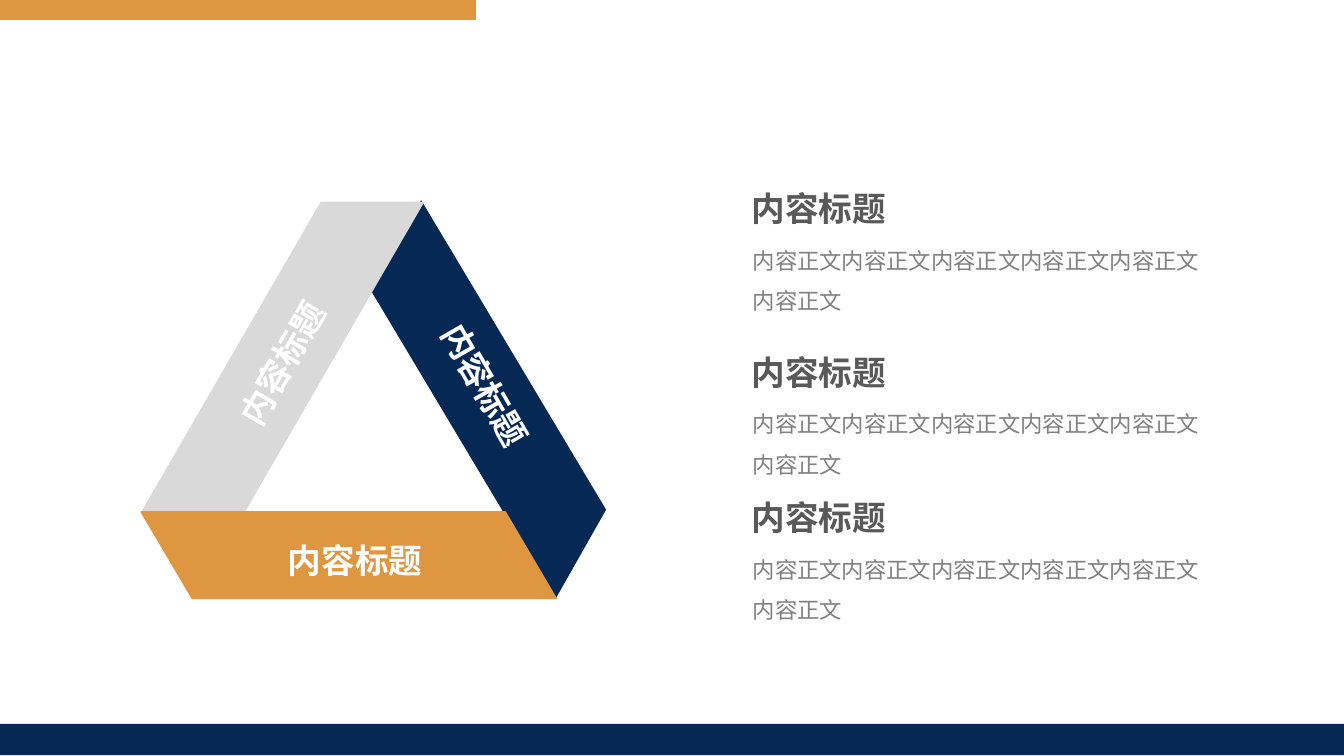
from lxml import etree
from pptx import Presentation
from pptx.dml.color import RGBColor
from pptx.enum import shapes, text
from pptx.oxml.ns import qn
from pptx.util import Cm, Pt

FONT = "Noto Sans CJK SC"
NAVY, GREY, ORANGE = "062855", "D9D9D9", "DE9640"
WHITE, HEADING, BODY = "FFFFFF", "595959", "808080"

# Content: lengths in cm
SIDES = [
    dict(title="内容标题", fill=NAVY, box=(8.76, 6.12, 7.09, 7.9), turn=299.5,
         slant=0.634, label=(10.49, 9.19, 3.48, 1.02), label_turn=60),
    dict(title="内容标题", fill=GREY, box=(3.56, 5.08, 7.14, 7.82), turn=0,
         slant=0.634, label=(4.75, 8.64, 4.72, 1.02), label_turn=300),
    dict(title="内容标题", fill=ORANGE, box=(3.56, 12.9, 10.46, 2.18), turn=0,
         slant=0.589, label=(7.21, 13.61, 3.48, 1.02), label_turn=0,
         mirrored=True, outlined=True),
]
DETAIL = ["内容正文内容正文内容正文内容正文内容正文", "内容正文"]
SECTIONS = [
    (4.62, "内容标题", DETAIL),
    (8.74, "内容标题", DETAIL),
    (12.4, "内容标题", DETAIL),
]
BARS = [
    (ORANGE, (0, 0, 4.72 * 2.54, 0.5), True),
    (NAVY, (0, 18.24, 33.87, 0.79), False),
]

deck = Presentation()
deck.slide_width, deck.slide_height = Cm(33.87), Cm(19.05)
slide = deck.slides.add_slide(deck.slide_layouts[6])


def colour(value):
    return RGBColor.from_string(value)


def add_block(kind, box, fill, outlined=False):
    block = slide.shapes.add_shape(kind, *map(Cm, box))
    block.shadow.inherit = False
    block.fill.solid()
    block.fill.fore_color.rgb = colour(fill)
    if outlined:
        block.line.color.rgb = colour(fill)
        block.line.width = Pt(1)
    else:
        block.line.fill.background()
    return block


def add_text(box, lines, size, ink, bold=False, spacing=None):
    holder = slide.shapes.add_textbox(*map(Cm, box))
    frame = holder.text_frame
    frame.word_wrap = True
    frame.text = "\n".join(lines)
    for paragraph in frame.paragraphs:
        paragraph.line_spacing = spacing
        for run in paragraph.runs:
            run.font.size, run.font.bold = Pt(size), bold
            run.font.name = FONT
            run.font.color.rgb = colour(ink)
            # East Asian typeface follows the Latin one
            latin = run.font._element.find(qn("a:latin"))
            east_asian = etree.Element(qn("a:ea"), typeface=FONT)
            latin.addnext(east_asian)
    return holder


# Triangle of folded bands with their labels
for side in SIDES:
    band = add_block(shapes.MSO_SHAPE.PARALLELOGRAM, side["box"], side["fill"],
                     side.get("outlined", False))
    band.adjustments[0] = side["slant"]
    band.rotation = side["turn"]
    if side.get("mirrored"):
        band.element.spPr.find(qn("a:xfrm")).set("flipH", "1")

    label = add_text(side["label"], [side["title"]], 24, WHITE, bold=True)
    label.rotation = side["label_turn"]
    frame = label.text_frame
    frame.margin_left = frame.margin_right = 0
    frame.margin_top = frame.margin_bottom = 0
    frame.vertical_anchor = text.MSO_ANCHOR.MIDDLE
    frame.paragraphs[0].alignment = text.PP_ALIGN.CENTER

# Top and bottom bars
for fill, box, outlined in BARS:
    add_block(shapes.MSO_SHAPE.RECTANGLE, box, fill, outlined)

# Headings and details on the right
for top, heading, detail in SECTIONS:
    add_text((18.69, top, 5.72, 1.27), [heading], 24, HEADING, bold=True)
    add_text((18.72, top + 1.14, 12.9, 2.18), detail, 16, BODY, spacing=1.5)

deck.save("out.pptx")
